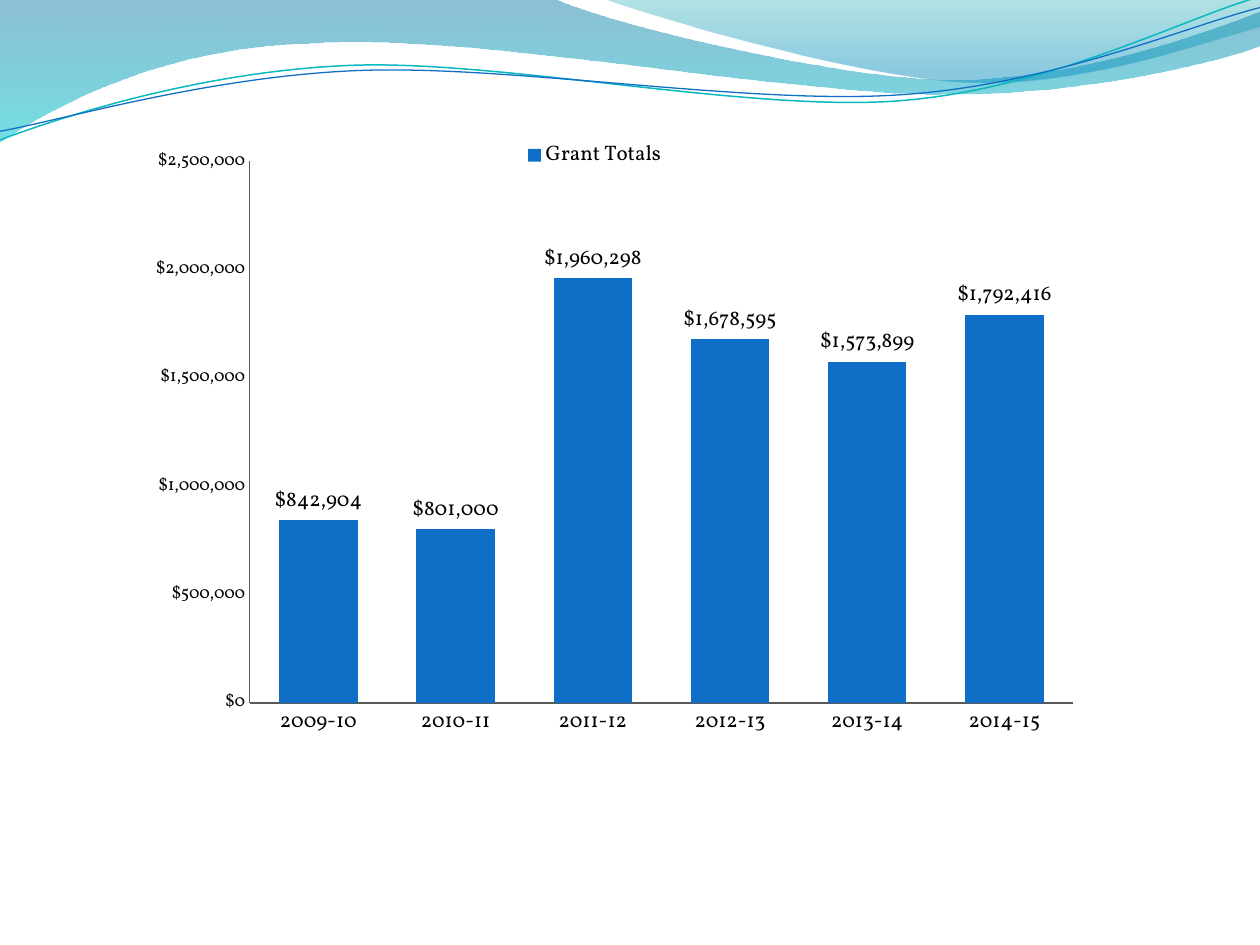
from lxml import etree
from pptx import Presentation
from pptx.chart.data import CategoryChartData
from pptx.dml.color import RGBColor
from pptx.enum.chart import XL_CHART_TYPE, XL_LABEL_POSITION, XL_LEGEND_POSITION, XL_TICK_MARK
from pptx.oxml.ns import qn
from pptx.util import Pt

COLUMNS = XL_CHART_TYPE.COLUMN_CLUSTERED
LABEL_ABOVE = XL_LABEL_POSITION.OUTSIDE_END
LEGEND_BOTTOM = XL_LEGEND_POSITION.BOTTOM
NO_TICK = XL_TICK_MARK.NONE
FONT = "Vollkorn"
DOLLARS = '"$"#,##0'

color = RGBColor.from_string


def draw_path(start, segments, closed):
    """Draw an outline; a segment is one point (line) or three (Bezier curve)."""
    builder = page.shapes.build_freeform(Pt(start[0]), Pt(start[1]))
    points = [(Pt(x), Pt(y)) for segment in segments for x, y in segment]
    builder.add_line_segments(points, close=closed)
    shape = builder.convert_to_shape()
    shape.shadow.inherit = False
    # Join each curve's three points into one Bezier segment
    lines = iter(list(shape.element.iter(qn("a:lnTo"))))
    for segment in segments:
        parts = [next(lines) for _ in segment]
        if len(parts) == 3:
            bezier = etree.Element(qn("a:cubicBezTo"))
            parts[0].addprevious(bezier)
            for part in parts:
                bezier.append(part[0])
                part.getparent().remove(part)
    return shape


def set_layout(parent, index, x, y, w, h, inner=False):
    """Place a chart part by percentages of the chart's size."""
    for old in parent.findall(qn("c:layout")):
        parent.remove(old)
    layout = etree.Element(qn("c:layout"))
    manual = etree.SubElement(layout, qn("c:manualLayout"))
    settings = [("layoutTarget", "inner")] if inner else []
    settings += [("xMode", "edge"), ("yMode", "edge")]
    settings += [("x", x / 100), ("y", y / 100), ("w", w / 100), ("h", h / 100)]
    for name, value in settings:
        etree.SubElement(manual, qn("c:" + name)).set("val", str(value))
    parent.insert(index, layout)


deck = Presentation()
deck.slide_width, deck.slide_height = Pt(720), Pt(540)
page = deck.slides.add_slide(deck.slide_layouts[6])

# Translucent waves: start, segments, gradient stops (position, color, opacity %)
waves = [
    ((0, 0), [
        [(316.8, -0.7)],
        [(342.7, 12.2), (478.1, 45.4), (545.8, 45.4)],
        [(614.2, 45.4), (689.8, 18.7), (720, 6.5)],
        [(720.7, 25.9)],
        [(707.8, 31.7), (626.4, 54.7), (537.1, 54)],
        [(447.8, 54), (275, 20.2), (185, 24.5)],
        [(92.9, 25.9), (33.1, 59.8), (-0.7, 81.4)],
        [(0, 0)],
    ], [(0, "0074A1", 45), (1, "00C6CF", 55)]),
    ((344.9, -0.7), [
        [(366.5, 7.9), (491, 44.6), (553.7, 46.8)],
        [(616.3, 49.7), (691.9, 23), (720, 15.1)],
        [(720, 0)],
        [(344.9, -0.7)],
    ], [(0, "00A1A9", 30), (0.8, "008BBF", 45)]),
]
for start, segments, stops in waves:
    wave = draw_path(start, segments, True)
    wave.line.fill.background()
    wave.fill.gradient()
    wave.fill.gradient_angle = 270
    for stop, (position, shade, _) in zip(wave.fill.gradient_stops, stops):
        stop.position = position
        stop.color.rgb = color(shade)
    for node, (_, _, opacity) in zip(wave.element.iter(qn("a:srgbClr")), stops):
        etree.SubElement(node, qn("a:alpha")).set("val", str(opacity * 1000))

# Thin curves below the waves, slightly turned
curves = [
    ((-1.4, 63), [
        [(33.8, 51.7), (114.1, 29.4), (199.8, 29.9)],
        [(284.8, 30.3), (425.8, 67.3), (512.4, 64.9)],
        [(599, 62.4), (676.5, 25.7), (720.2, 15.5)],
    ], "0AB8BF", 0.85),
    ((-1.1, 58), [
        [(32.9, 53.8), (118.3, 32.5), (204.1, 33)],
        [(290.6, 33.4), (428.9, 63.8), (515.5, 61.4)],
        [(601.4, 59.6), (678.4, 30.1), (721.4, 21.3)],
    ], "0F6FC6", 0.75),
]
for start, segments, shade, width in curves:
    curve = draw_path(start, segments, False)
    curve.rotation = 357.3
    curve.fill.background()
    curve.line.color.rgb = color(shade)
    curve.line.width = Pt(width)

# Grant chart
data = CategoryChartData(number_format=DOLLARS)
data.categories = ["2009-10", "2010-11", "2011-12", "2012-13", "2013-14", "2014-15"]
data.add_series("Grant Totals", [842904, 801000, 1960298, 1678595, 1573899, 1792416])
chart = page.shapes.add_chart(COLUMNS, Pt(77.8), Pt(77.8), Pt(545.8), Pt(378), data).chart
chart.has_title = False
chart.font.name = FONT
chart.font.size = Pt(10)
chart.font.color.rgb = color("000000")

# Columns and their labels
plot = chart.plots[0]
plot.gap_width = 75
plot.vary_by_categories = False
bars = plot.series[0]
bars.format.fill.solid()
bars.format.fill.fore_color.rgb = color("0F6FC6")
labels = bars.data_labels
labels.show_value = True
labels.position = LABEL_ABOVE
labels.number_format = DOLLARS
labels.number_format_is_linked = False

# Axes
amounts, years = chart.value_axis, chart.category_axis
amounts.minimum_scale, amounts.maximum_scale, amounts.major_unit = 0, 2500000, 500000
amounts.tick_labels.number_format = DOLLARS
amounts.tick_labels.number_format_is_linked = False
for axis, size, width in ((amounts, 10, 0.75), (years, 12, 1)):
    axis.has_major_gridlines = False
    axis.major_tick_mark = axis.minor_tick_mark = NO_TICK
    axis.format.line.color.rgb = color("595959")
    axis.format.line.width = Pt(width)
    axis.tick_labels.font.size = Pt(size)

# Legend
chart.has_legend = True
legend = chart.legend
legend.position = LEGEND_BOTTOM
legend.include_in_layout = False

for font in (labels.font, legend.font, years.tick_labels.font, amounts.tick_labels.font):
    font.name = FONT
    font.color.rgb = color("000000")
for font in (labels.font, legend.font):
    font.size = Pt(12)

chart_node = chart.element.find(qn("c:chart"))
set_layout(chart_node.find(qn("c:plotArea")), 0, 11.9, 3.8, 86.2, 81.9, inner=True)
set_layout(chart_node.find(qn("c:legend")), 1, 40, 0.7, 16, 4)

deck.save("out.pptx")
